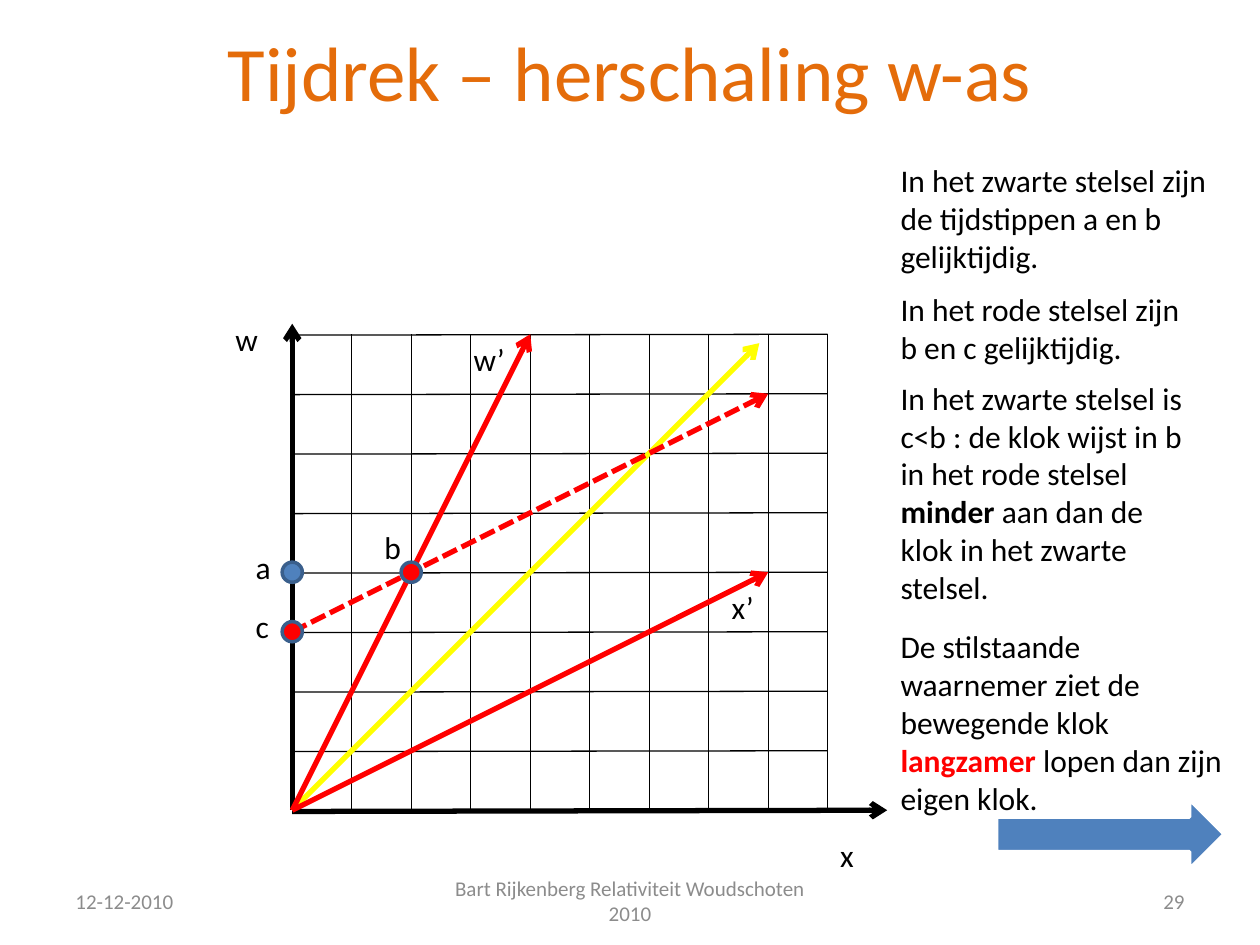
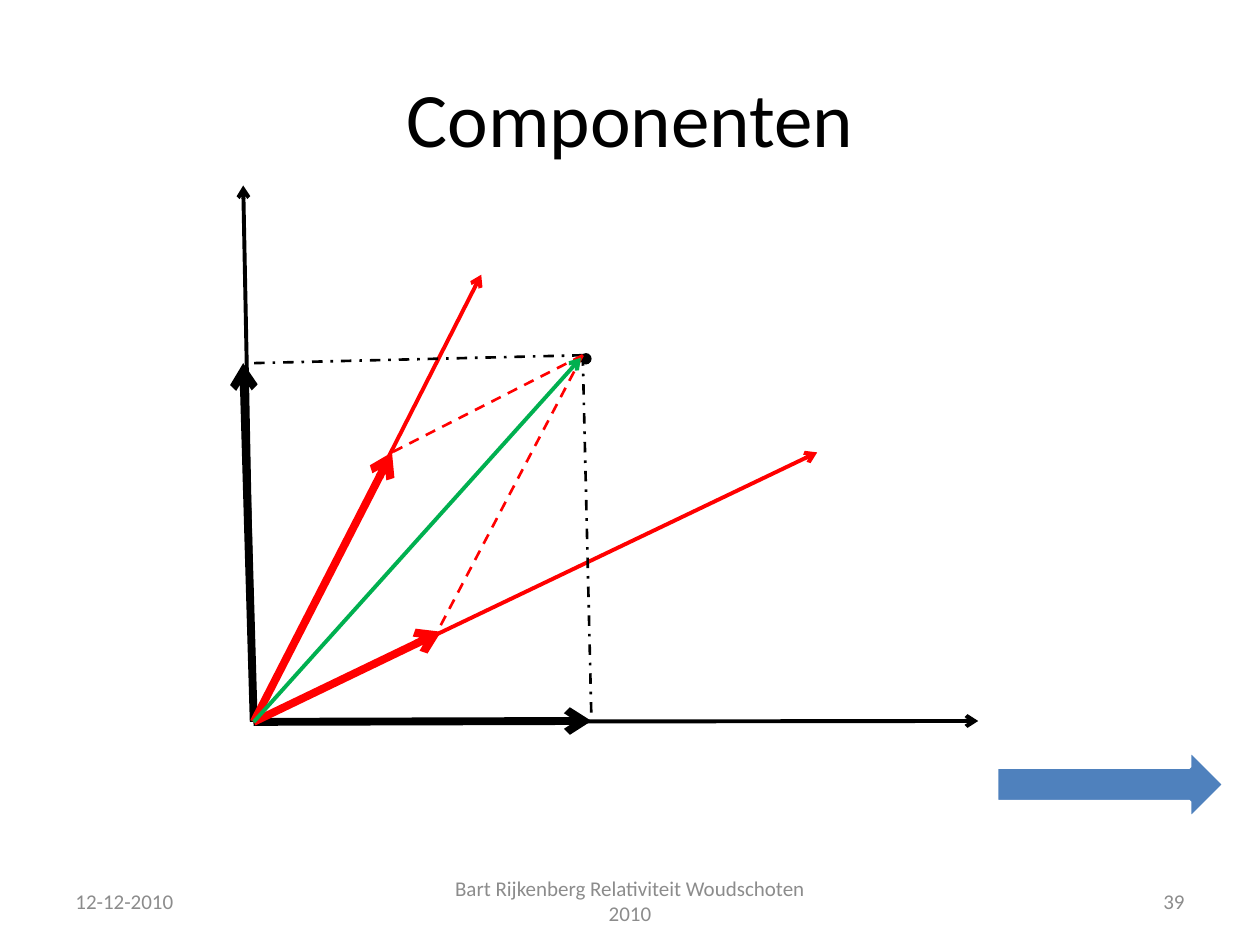
from lxml import etree
from pptx import Presentation
from pptx.dml.color import RGBColor
from pptx.enum.dml import MSO_LINE
from pptx.enum.shapes import MSO_CONNECTOR, MSO_SHAPE
from pptx.enum.text import MSO_ANCHOR, MSO_AUTO_SIZE, PP_ALIGN
from pptx.oxml.ns import qn
from pptx.util import Pt

STRAIGHT = MSO_CONNECTOR.STRAIGHT
OVAL, RIGHT_ARROW = MSO_SHAPE.OVAL, MSO_SHAPE.RIGHT_ARROW
LEFT, CENTER, RIGHT = PP_ALIGN.LEFT, PP_ALIGN.CENTER, PP_ALIGN.RIGHT
TOP, MIDDLE = MSO_ANCHOR.TOP, MSO_ANCHOR.MIDDLE
FIT_SHAPE, FIXED = MSO_AUTO_SIZE.SHAPE_TO_FIT_TEXT, MSO_AUTO_SIZE.NONE
DASH, DASH_DOT, SHORT_DASH = MSO_LINE.DASH, MSO_LINE.DASH_DOT, MSO_LINE.SQUARE_DOT

BLACK = RGBColor(0x00, 0x00, 0x00)
WHITE = RGBColor(0xFF, 0xFF, 0xFF)
RED = RGBColor(0xFF, 0x00, 0x00)
YELLOW = RGBColor(0xFF, 0xFF, 0x00)
GREEN = RGBColor(0x00, 0xB0, 0x50)
ORANGE = RGBColor(0xE4, 0x6C, 0x0A)
BLUE = RGBColor(0x4F, 0x81, 0xBD)
DARK_BLUE = RGBColor(0x3A, 0x5F, 0x8C)
GRAY = RGBColor(0x8C, 0x8C, 0x8C)

TITLE_ONLY = 5
DATE = "12-12-2010"
FOOTER = "Bart Rijkenberg Relativiteit Woudschoten 2010"


class Deck:
    font = "Calibri"

    def __init__(self):
        self.presentation = Presentation()
        self.presentation.slide_width = Pt(720)
        self.presentation.slide_height = Pt(540)
        self.slide = None

    def style(self, run, size, color, bold=False):
        run.font.name = self.font
        run.font.size = Pt(size)
        run.font.color.rgb = color
        run.font.bold = bold

    def add_slide(self, title, number, color=BLACK):
        layout = self.presentation.slide_layouts[TITLE_ONLY]
        self.slide = self.presentation.slides.add_slide(layout)
        heading = self.slide.shapes.title
        heading.left, heading.top, heading.width, heading.height = Pt(36), Pt(21.6), Pt(648), Pt(90)
        frame = heading.text_frame
        frame.text = title
        frame.vertical_anchor = MIDDLE
        frame.paragraphs[0].alignment = CENTER
        for run in frame.paragraphs[0].runs:
            self.style(run, 44, color)
        for left, width, text, align in (
            (36, 168, DATE, LEFT),
            (246, 228, FOOTER, CENTER),
            (516, 168, str(number), RIGHT),
        ):
            box = self.text(left, 500.5, width, [(text, GRAY, False)], 28.75, 12, align)
            box.text_frame.vertical_anchor = MIDDLE
            box.text_frame.auto_size = FIXED

    def text(self, left, top, width, parts, height=29, size=18, align=LEFT, wrap=True):
        box = self.slide.shapes.add_textbox(Pt(left), Pt(top), Pt(width), Pt(height))
        frame = box.text_frame
        frame.word_wrap = wrap
        frame.auto_size = FIT_SHAPE
        frame.vertical_anchor = TOP
        paragraph = frame.paragraphs[0]
        paragraph.alignment = align
        for words, color, bold in parts:
            run = paragraph.add_run()
            run.text = words
            self.style(run, size, color, bold)
        return box

    def label(self, left, top, width, text):
        self.text(left, top, width, [(text, BLACK, False)], wrap=False)

    def line(self, start, end, color=BLACK, width=0.75, dash=None, arrow=False):
        connector = self.slide.shapes.add_connector(
            STRAIGHT, Pt(start[0]), Pt(start[1]), Pt(end[0]), Pt(end[1]))
        connector.line.color.rgb = color
        connector.line.width = Pt(width)
        if dash:
            connector.line.dash_style = dash
        if arrow:
            outline = connector.line._get_or_add_ln()
            etree.SubElement(outline, qn("a:tailEnd"), type="arrow")
        etree.SubElement(connector._element.spPr, qn("a:effectLst"))

    def arrow(self, start, end, color=BLACK, width=3, dash=None):
        self.line(start, end, color, width, dash, arrow=True)

    def shape(self, kind, left, top, width, height, fill, outline, weight):
        figure = self.slide.shapes.add_shape(kind, Pt(left), Pt(top), Pt(width), Pt(height))
        figure.shadow.inherit = False
        figure.fill.solid()
        figure.fill.fore_color.rgb = fill
        figure.line.color.rgb = outline
        figure.line.width = Pt(weight)

    def dot(self, center, diameter, fill, outline, weight):
        x, y = center
        self.shape(OVAL, x - diameter / 2, y - diameter / 2, diameter, diameter,
                   fill, outline, weight)

    def next_arrow(self, top):
        self.shape(RIGHT_ARROW, 569.5, top, 130, 39.5, BLUE, WHITE, 2)


def grid_point(column, row):
    return 167 + 34 * column, 463 - 34 * row


def build_time_dilation(deck):
    deck.add_slide("Tijdrek – herschaling w-as\v", 29, ORANGE)
    columns, rows = 9, 8
    origin = grid_point(0, 0)
    deck.arrow(origin, (origin[0], 185))
    deck.arrow((origin[0], 463.7), grid_point(10, 0))
    for column in range(1, columns + 1):
        deck.line(grid_point(column, 0), grid_point(column, rows))
    for row in range(1, rows + 1):
        x, y = grid_point(0, row)
        deck.line((x, y + 0.5), grid_point(columns, row))

    deck.arrow(origin, grid_point(7.85, 7.85), YELLOW)
    deck.arrow(origin, grid_point(4, 8), RED)
    deck.arrow(origin, grid_point(8, 4), RED)

    event_a, event_b, event_c = grid_point(0, 4), grid_point(2, 4), grid_point(0, 3)
    deck.dot(event_a, 11.5, BLUE, DARK_BLUE, 2)
    deck.arrow(event_c, grid_point(8, 7), RED, dash=SHORT_DASH)
    for event in (event_c, event_b):
        deck.dot(event, 11.5, RED, DARK_BLUE, 2)

    for left, top, width, name in (
        (127.5, 179.5, 27.5, "w"),
        (473, 474, 22.5, "x"),
        (263.5, 191, 32.5, "w’"),
        (411, 332.5, 27.5, "x’"),
        (139, 309.5, 23, "a"),
        (212.5, 298, 24.5, "b"),
        (139, 343.5, 22.5, "c"),
    ):
        deck.label(left, top, width, name)

    for top, width, height, parts in (
        (88.5, 193, 72.5, [
            ("In het zwarte stelsel zijn de tijdstippen a en b gelijktijdig.", BLACK, False)]),
        (162, 181.5, 51, [
            ("In het rode stelsel zijn b en c gelijktijdig.", BLACK, False)]),
        (213, 181.5, 138, [
            ("In het zwarte stelsel is c<b : de klok wijst in b in het rode stelsel ", BLACK, False),
            ("minder ", BLACK, True),
            ("aan dan de klok in het zwarte stelsel.", BLACK, False)]),
        (355, 204, 116.5, [
            ("De stilstaande waarnemer ziet de bewegende klok ", BLACK, False),
            ("langzamer ", RED, True),
            ("lopen dan zijn eigen klok.", BLACK, False)]),
    ):
        deck.text(507.5, top, width, parts, height)
    deck.next_arrow(457)


def build_components(deck):
    deck.add_slide("Componenten", 39)
    origin = (145, 412.5)
    event = (333, 203)
    axes = (
        ((139, 106), BLACK),
        ((559, 412), BLACK),
        ((275, 157), RED),
        ((467, 258.5), RED),
    )
    projections = (
        ((145, 207.5), BLACK, DASH_DOT),
        ((338, 412), BLACK, DASH_DOT),
        ((224, 258.5), RED, DASH),
        ((247, 366.5), RED, DASH),
    )
    components = (
        ((139, 207.5), BLACK),
        ((338, 412), BLACK),
        ((224, 258.5), RED),
        ((252, 361), RED),
    )
    for tip, color in axes:
        deck.arrow(origin, tip, color, 2.25)
    deck.dot((334.8, 205), 5.75, BLACK, BLACK, 0.75)
    for foot, color, dash in projections:
        deck.line(event, foot, color, 1.5, dash)
    for tip, color in components:
        deck.arrow(origin, tip, color, 4.5)
    deck.arrow(origin, (332, 204.5), GREEN, 2.25)
    deck.next_arrow(428.5)


def main():
    deck = Deck()
    build_time_dilation(deck)
    build_components(deck)
    deck.presentation.save("out.pptx")


if __name__ == "__main__":
    main()
